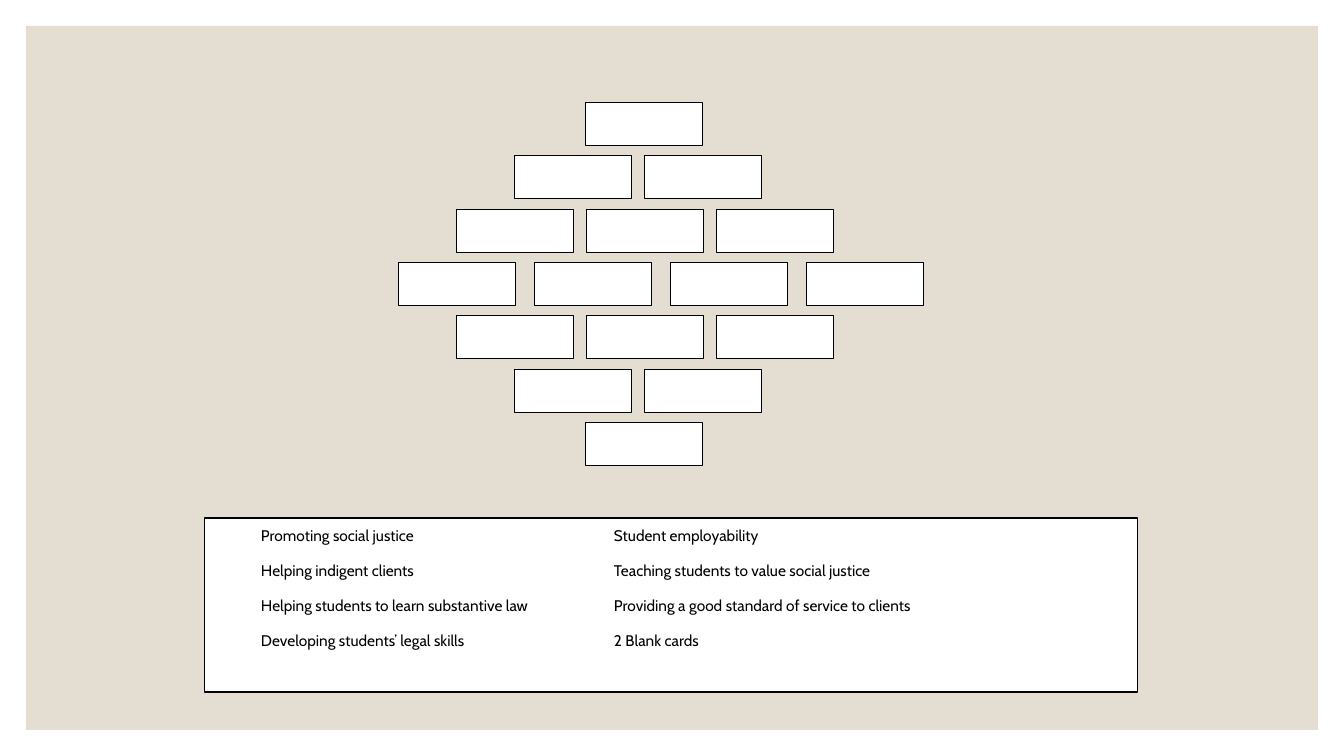
import pptx
import pptx.dml.color
import pptx.enum.shapes
import pptx.enum.text
import pptx.util

EMU_PER_PX = 914400 / 100.8
COLORS = {"backdrop": "E3DED1", "card": "FFFFFF", "ink": "000000"}
FONT = "Cabin"

CARD_WIDTH, CARD_HEIGHT = 117, 43
FIRST_ROW_TOP, LAST_ROW_TOP = 103, 423
# Number of cards in a row: (left edge of first card, step to the next)
ROW_LAYOUT = {1: (586, 0), 2: (515, 130), 3: (457, 130), 4: (399, 136)}
DIAMOND_ROWS = [1, 2, 3, 4, 3, 2, 1]

SECOND_COLUMN = 353
STATEMENTS = [
    ("Promoting social justice", "Student employability"),
    ("Helping indigent clients", "Teaching students to value social justice"),
    ("Helping students to learn substantive law",
     "Providing a good standard of service to clients"),
    ("Developing students’ legal skills", "2 Blank cards"),
]


def px(length):
    return pptx.util.Emu(round(length * EMU_PER_PX))


def rgb(name):
    return pptx.dml.color.RGBColor.from_string(COLORS[name])


def apply_format(target, values):
    for name, value in values.items():
        setattr(target, name, value)


def add_panel(slide, left, top, width, height, fill, outlined=True):
    panel = slide.shapes.add_shape(
        pptx.enum.shapes.MSO_SHAPE.RECTANGLE,
        px(left), px(top), px(width), px(height))
    panel.shadow.inherit = False
    panel.fill.solid()
    panel.fill.fore_color.rgb = rgb(fill)
    if outlined:
        panel.line.color.rgb = rgb("ink")
        panel.line.width = pptx.util.Pt(0.75)
    else:
        panel.line.fill.background()
    return panel


def add_diamond(slide):
    """Rank the blank cards in rows that widen and narrow again."""
    row_step = (LAST_ROW_TOP - FIRST_ROW_TOP) / (len(DIAMOND_ROWS) - 1)
    for row, card_count in enumerate(DIAMOND_ROWS):
        left, card_step = ROW_LAYOUT[card_count]
        top = FIRST_ROW_TOP + round(row * row_step)
        for card in range(card_count):
            add_panel(slide, left + card * card_step, top,
                      CARD_WIDTH, CARD_HEIGHT, "card")


def add_tab_stop(paragraph, position):
    properties = paragraph._p.get_or_add_pPr()
    tab_list = pptx.oxml.parse_xml(
        '<a:tabLst xmlns:a="http://schemas.openxmlformats.org/drawingml/2006/main">'
        f'<a:tab pos="{px(position)}" algn="l"/></a:tabLst>')
    properties.append(tab_list)


def add_statements(slide):
    """List the card statements in two tabbed columns."""
    frame = add_panel(slide, 205, 518, 933, 174, "card").text_frame
    apply_format(frame, {
        "word_wrap": True,
        "vertical_anchor": pptx.enum.text.MSO_ANCHOR.TOP,
        "margin_left": px(56),
        "margin_top": px(5),
        "margin_right": px(5),
        "margin_bottom": px(5),
    })
    for index, columns in enumerate(STATEMENTS):
        paragraph = frame.add_paragraph() if index else frame.paragraphs[0]
        apply_format(paragraph, {
            "alignment": pptx.enum.text.PP_ALIGN.LEFT,
            "line_spacing": 1.15,
            "space_after": pptx.util.Pt(10),
        })
        add_tab_stop(paragraph, SECOND_COLUMN)
        statement = paragraph.add_run()
        statement.text = "\t".join(columns)
        apply_format(statement.font, {"name": FONT, "size": pptx.util.Pt(11)})
        statement.font.color.rgb = rgb("ink")


def main():
    deck = pptx.Presentation()
    apply_format(deck, {"slide_width": px(1344), "slide_height": px(756)})
    slide = deck.slides.add_slide(deck.slide_layouts[6])
    add_panel(slide, 26, 26, 1292, 704, "backdrop", outlined=False)
    add_statements(slide)
    add_diamond(slide)
    deck.save("out.pptx")


if __name__ == "__main__":
    main()
